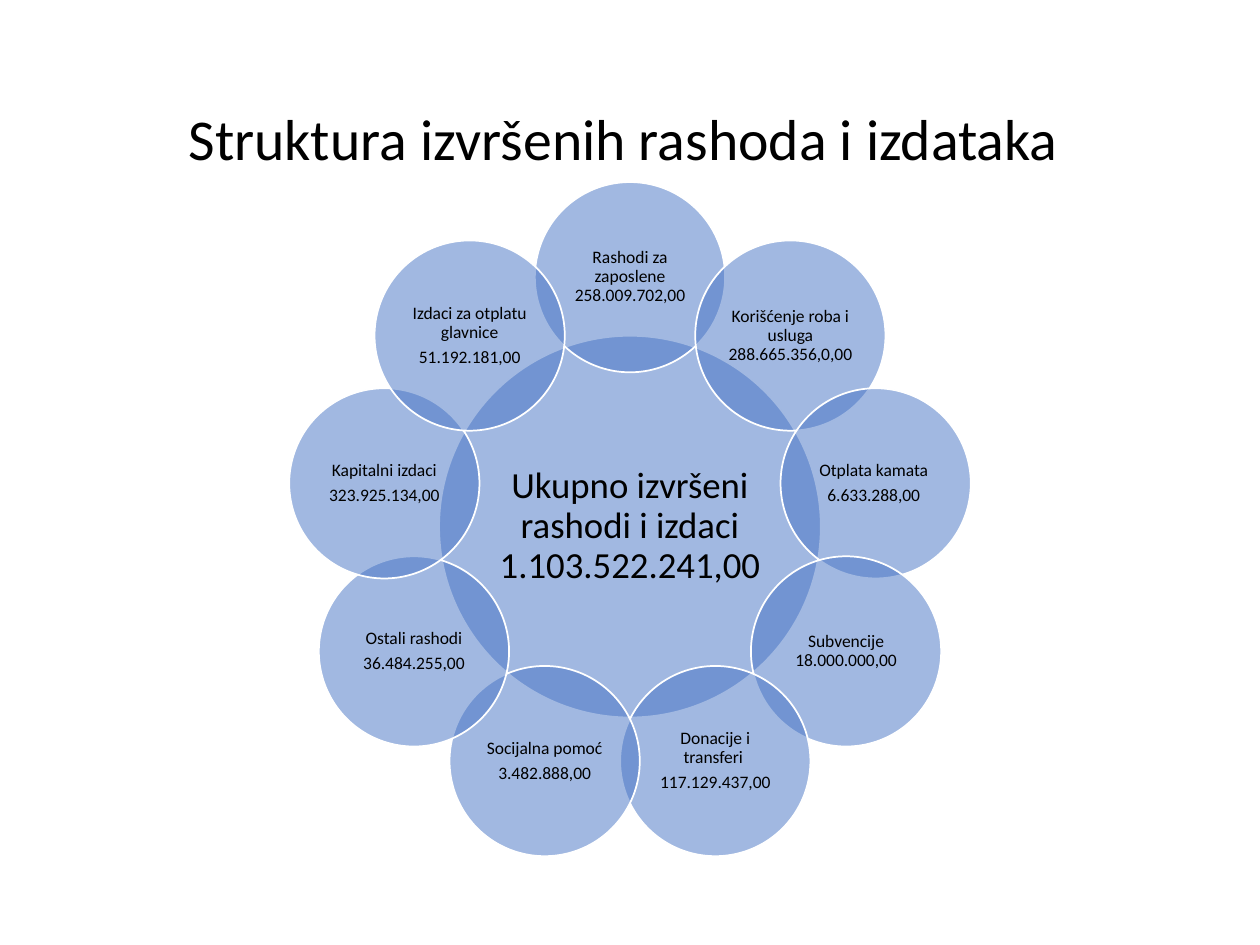
"""Build a radial Venn slide of executed expenditures and outlays."""
from math import cos, radians, sin

from lxml import etree
from pptx import Presentation
from pptx.dml.color import RGBColor
from pptx.enum.shapes import MSO_SHAPE
from pptx.enum.text import MSO_ANCHOR, PP_ALIGN
from pptx.oxml.ns import qn
from pptx.util import Inches, Pt

OVAL = MSO_SHAPE.OVAL
MIDDLE, BOTTOM = MSO_ANCHOR.MIDDLE, MSO_ANCHOR.BOTTOM
CENTER = PP_ALIGN.CENTER
BLUE = RGBColor(0x44, 0x72, 0xC4)
WHITE = RGBColor(0xFF, 0xFF, 0xFF)
BLACK = RGBColor(0, 0, 0)

TITLE = "Struktura izvršenih rashoda i izdataka "
TOTAL = ["Ukupno izvršeni rashodi i izdaci 1.103.522.241,00"]
ITEMS = [
    ["Rashodi za zaposlene 258.009.702,00"],
    ["Korišćenje roba i usluga 288.665.356,0,00"],
    ["Otplata kamata ", "6.633.288,00 "],
    ["Subvencije 18.000.000,00"],
    ["Donacije i transferi ", "117.129.437,00"],
    ["Socijalna pomoć", "3.482.888,00"],
    ["Ostali rashodi", "36.484.255,00"],
    ["Kapitalni izdaci", "323.925.134,00"],
    ["Izdaci za otplatu glavnice", "51.192.181,00"],
]
MID_X, MID_Y, ORBIT = 5, 4.18, 1.98
BIG, SMALL = 3.03, 1.51


def assign(obj, values):
    for name, value in values.items():
        setattr(obj, name, value)


def write(frame, lines, size, after=0):
    for i, line in enumerate(lines):
        para = frame.add_paragraph() if i else frame.paragraphs[0]
        assign(para, {"text": line, "alignment": CENTER, "line_spacing": 0.9,
                      "space_before": Pt(0), "space_after": Pt(after)})
        assign(para.font, {"name": "Calibri", "size": Pt(size)})
        para.font.color.rgb = BLACK


def circle(slide, x, y, width, lines, size, inset):
    shape = slide.shapes.add_shape(
        OVAL, Inches(x - width / 2), Inches(y - width / 2),
        Inches(width), Inches(width))
    shape.shadow.inherit = False
    shape.fill.solid()
    shape.fill.fore_color.rgb = BLUE
    color = shape.fill._xPr.find(".//" + qn("a:srgbClr"))
    etree.SubElement(color, qn("a:alpha"), val="50000")
    shape.line.color.rgb = WHITE
    shape.line.width = Pt(1)
    sides = ("left", "top", "right", "bottom")
    assign(shape.text_frame, {"margin_" + side: Inches(inset) for side in sides})
    assign(shape.text_frame, {"word_wrap": True, "vertical_anchor": MIDDLE})
    write(shape.text_frame, lines, size, size * 0.35)


def main():
    deck = Presentation()
    assign(deck, {"slide_width": Inches(10), "slide_height": Inches(7.5)})
    slide = deck.slides.add_slide(deck.slide_layouts[5])
    title = slide.shapes.title
    assign(title, {"left": Inches(0.3), "top": Inches(0.25),
                   "width": Inches(9.4), "height": Inches(1.17)})
    title.text_frame.vertical_anchor = BOTTOM
    write(title.text_frame, [TITLE], 33)

    circle(slide, MID_X, MID_Y, BIG, TOTAL, 21, 0.03)
    for i, lines in enumerate(ITEMS):
        angle = radians(360 / len(ITEMS) * i)
        x, y = MID_X + ORBIT * sin(angle), MID_Y - ORBIT * cos(angle)
        circle(slide, x, y, SMALL, lines, 10, 0.01)
    deck.save("out.pptx")


if __name__ == "__main__":
    main()
